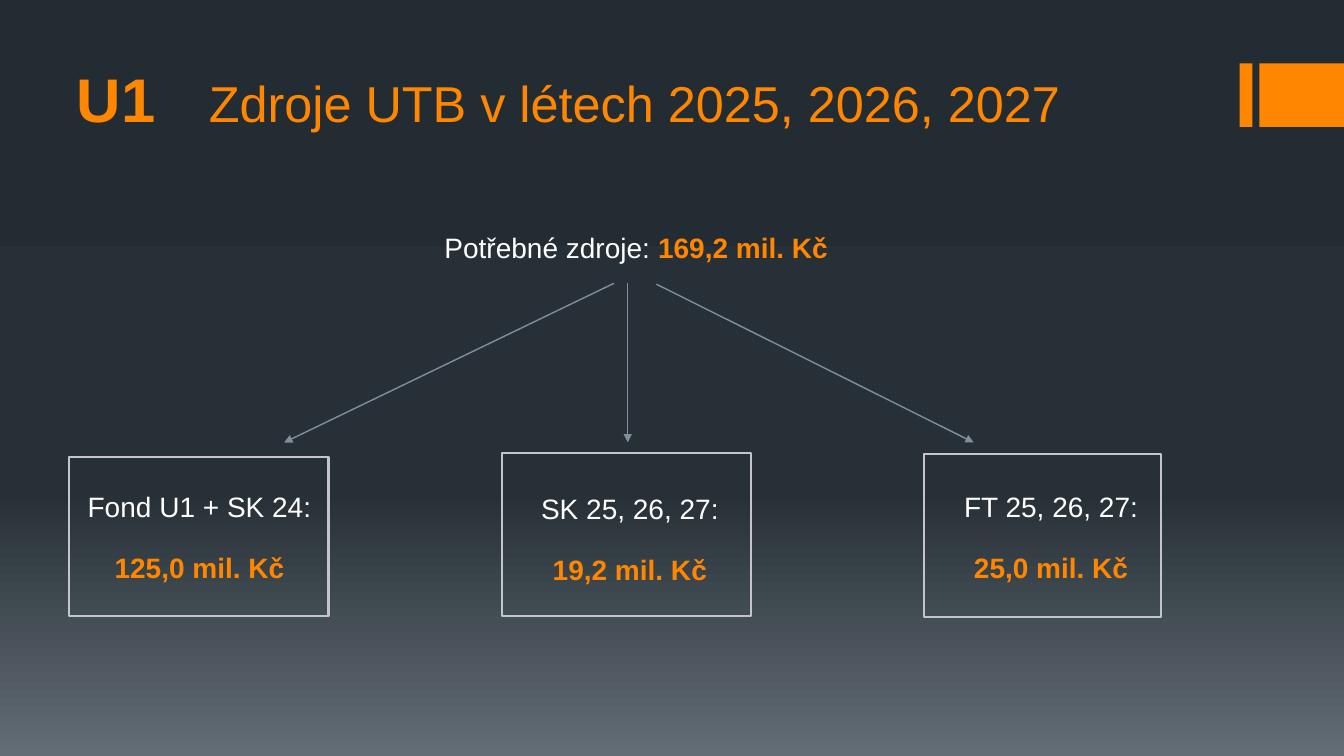
from copy import deepcopy
from dataclasses import dataclass

from lxml import etree
from pptx import Presentation
from pptx.dml.color import RGBColor
from pptx.enum.shapes import MSO_CONNECTOR, MSO_SHAPE
from pptx.enum.text import MSO_ANCHOR, MSO_AUTO_SIZE, PP_ALIGN
from pptx.oxml.ns import qn
from pptx.util import Cm, Pt

RECTANGLE = MSO_SHAPE.RECTANGLE
STRAIGHT = MSO_CONNECTOR.STRAIGHT
BOTTOM = MSO_ANCHOR.BOTTOM
NO_AUTOFIT = MSO_AUTO_SIZE.NONE
LEFT, CENTER = PP_ALIGN.LEFT, PP_ALIGN.CENTER


@dataclass(frozen=True)
class Theme:
    font: str = "Arial"
    accent: str = "FF8600"
    text: str = "FFFFFF"
    arrow: str = "838D9B"
    frame: str = "C5C4CC"
    background: tuple = ((0, "242C33"), (0.65, "273037"), (1, "636D76"))
    code_size: float = 44
    title_size: float = 36
    body_size: float = 20
    space_after: float = 18
    line_spacing: float = 1.05


class SlideBuilder:
    def __init__(self, deck, theme):
        self.theme = theme
        self.slide = deck.slides.add_slide(deck.slide_layouts[5])

    def background(self):
        fill = self.slide.background.fill
        fill.gradient()
        fill.gradient_angle = 270
        stop_list = self.slide.element.find(".//" + qn("a:gsLst"))
        stop_list.append(deepcopy(stop_list[-1]))
        for stop, (position, color) in zip(fill.gradient_stops, self.theme.background):
            stop.position = position
            stop.color.rgb = RGBColor.from_string(color)

    def style(self, span, size, color, bold=False):
        span.font.name = self.theme.font
        span.font.size = Pt(size)
        span.font.bold = bold
        span.font.color.rgb = RGBColor.from_string(color)

    def rectangle(self, left, top, width, height, fill=None, line=None):
        box = self.slide.shapes.add_shape(
            RECTANGLE, Cm(left), Cm(top), Cm(width), Cm(height))
        box.shadow.inherit = False
        if fill:
            box.fill.solid()
            box.fill.fore_color.rgb = RGBColor.from_string(fill)
        else:
            box.fill.background()
        if line:
            box.line.color.rgb = RGBColor.from_string(line)
            box.line.width = Pt(1.5)
        else:
            box.line.fill.background()

    def title(self, code, heading, left, top, width, height, tab):
        box = self.slide.shapes.title
        box.left, box.top, box.width, box.height = Cm(left), Cm(top), Cm(width), Cm(height)
        frame = box.text_frame
        frame.auto_size = NO_AUTOFIT
        frame.vertical_anchor = BOTTOM
        para = frame.paragraphs[0]
        para.alignment = LEFT
        # Tab stop between the code and the heading
        stops = etree.SubElement(para._p.get_or_add_pPr(), qn("a:tabLst"))
        etree.SubElement(stops, qn("a:tab"), pos=str(Cm(tab)), algn="l")
        for text, size, bold in ((code, self.theme.code_size, True),
                                 ("\t" + heading, self.theme.title_size, False)):
            span = para.add_run()
            span.text = text
            self.style(span, size, self.theme.accent, bold)

    def text(self, lines, left, top, width, height, align=CENTER):
        """Each line is a list of (text, is_amount) spans."""
        box = self.slide.shapes.add_textbox(Cm(left), Cm(top), Cm(width), Cm(height))
        frame = box.text_frame
        frame.word_wrap = True
        for index, line in enumerate(lines):
            para = frame.add_paragraph() if index else frame.paragraphs[0]
            para.alignment = align
            para.space_after = Pt(self.theme.space_after)
            para.line_spacing = self.theme.line_spacing
            para._p.get_or_add_pPr().set("marL", str(Cm(0.46)))
            for text, is_amount in line:
                span = para.add_run()
                span.text = text
                color = self.theme.accent if is_amount else self.theme.text
                self.style(span, self.theme.body_size, color, is_amount)

    def arrow(self, start, end):
        connector = self.slide.shapes.add_connector(
            STRAIGHT, *(Cm(value) for value in start + end))
        connector.line.color.rgb = RGBColor.from_string(self.theme.arrow)
        connector.line.width = Pt(1)
        etree.SubElement(connector.line._get_or_add_ln(), qn("a:tailEnd"), type="triangle")
        etree.SubElement(connector._element.spPr, qn("a:effectLst"))


def main():
    deck = Presentation()
    deck.slide_width, deck.slide_height = Cm(33.87), Cm(19.05)
    theme = Theme()
    page = SlideBuilder(deck, theme)
    page.background()

    # Accent bars at the right edge
    for left, width in ((31.24, 0.32), (31.74, 2.13)):
        page.rectangle(left, 1.6, width, 1.6, fill=theme.accent)

    # Title and total
    page.title("U1", "Zdroje UTB v létech 2025, 2026, 2027",
               1.68, 1.32, 29.24, 2.21, tab=3.33)
    page.text([[("Potřebné zdroje: ", False), ("169,2 mil. Kč", True)]],
              10.49, 5.64, 10.69, 1.12, align=LEFT)

    # Arrows from the total to the sources
    for start, end_left in (((15.47, 7.14), 7.16),
                            ((15.82, 7.14), 15.82),
                            ((16.54, 7.16), 24.54)):
        page.arrow(start, (end_left, 11.15))

    # Sources: label, amount, text (left, top, width), frame (left, top, width, height)
    sources = (
        ("Fond U1 + SK 24:", "125,0 mil. Kč", (0.99, 12.17, 7.62), (1.73, 11.51, 6.55, 4.01)),
        ("SK 25, 26, 27:", "19,2 mil. Kč", (12.37, 12.22, 6.55), (12.65, 11.42, 6.27, 4.11)),
        ("FT 25, 26, 27:", "25,0 mil. Kč", (23.06, 12.17, 6.4), (23.28, 11.44, 5.97, 4.11)),
    )
    for label, amount, text_place, frame_place in sources:
        page.text([[(label, False)], [(amount, True)]], *text_place, 2.62)
        page.rectangle(*frame_place, line=theme.frame)

    deck.save("out.pptx")


if __name__ == "__main__":
    main()
